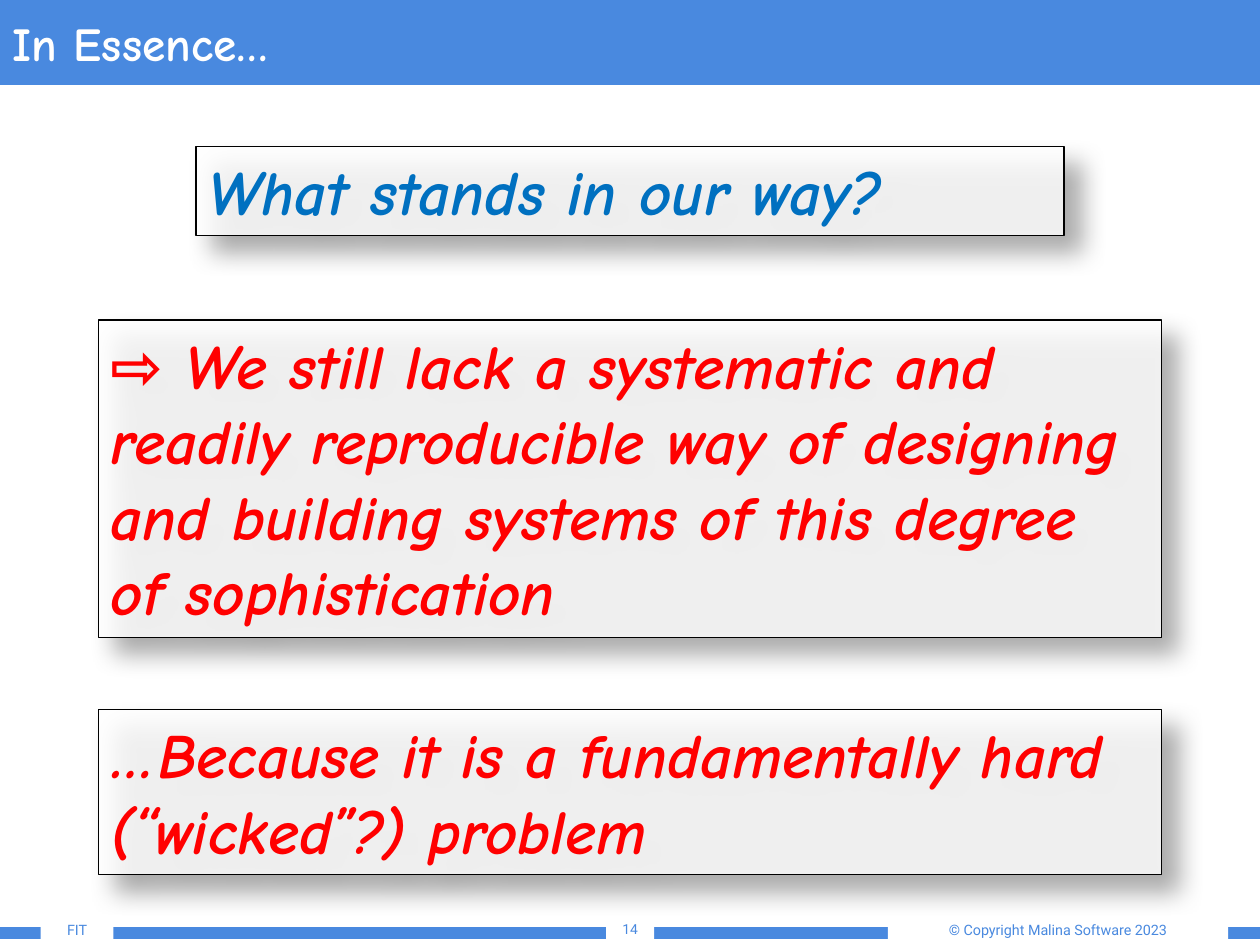
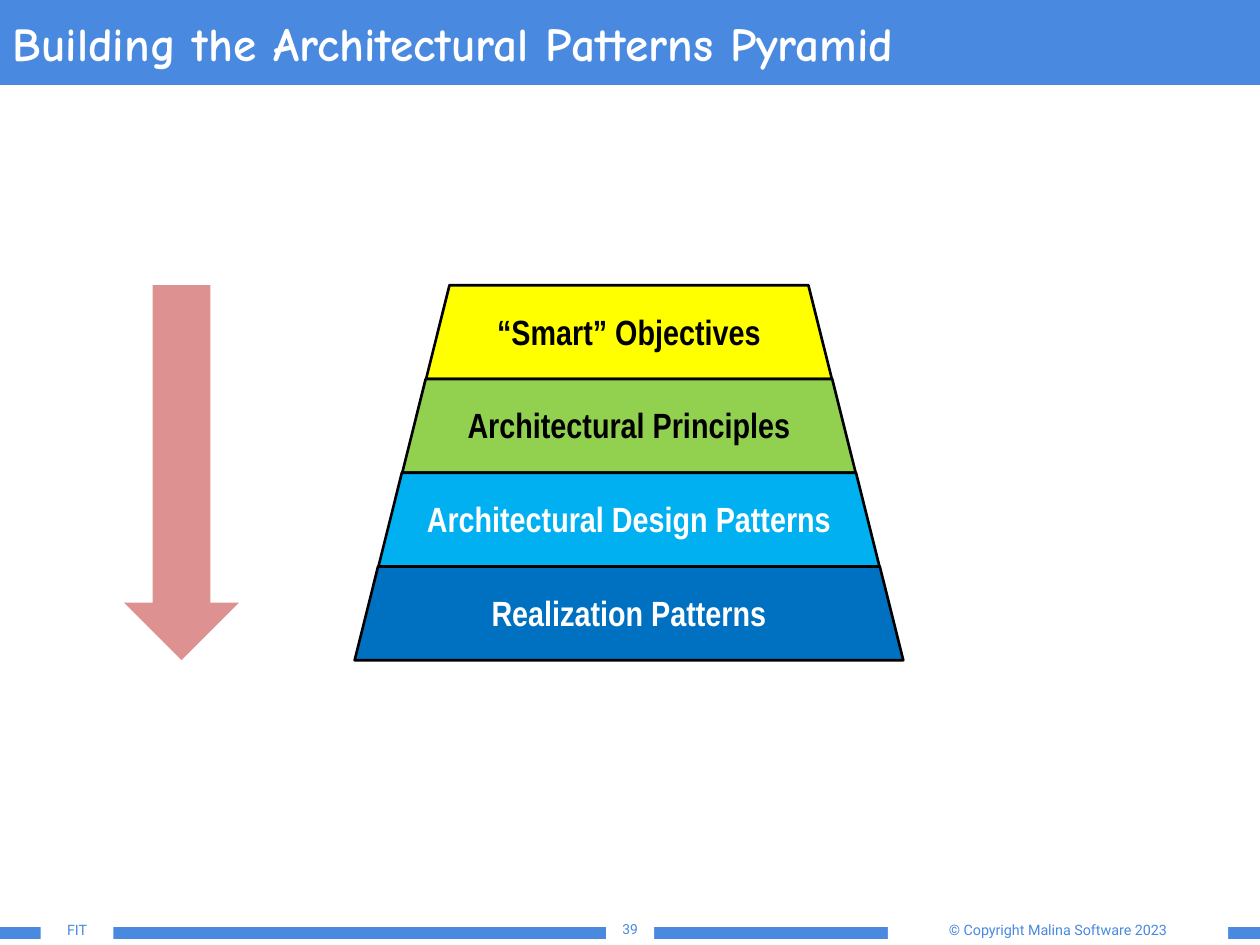
from dataclasses import dataclass

from pptx import Presentation
from pptx.dml.color import RGBColor
from pptx.enum.shapes import MSO_SHAPE
from pptx.enum.text import MSO_ANCHOR, PP_ALIGN
from pptx.oxml import parse_xml
from pptx.oxml.ns import nsdecls, qn
from pptx.util import Cm, Pt

RECTANGLE = MSO_SHAPE.RECTANGLE
TRAPEZOID = MSO_SHAPE.TRAPEZOID
DOWN_ARROW = MSO_SHAPE.DOWN_ARROW
TOP, MIDDLE = MSO_ANCHOR.TOP, MSO_ANCHOR.MIDDLE
LEFT, CENTER = PP_ALIGN.LEFT, PP_ALIGN.CENTER


@dataclass
class Theme:
    band: str = "4989DF"
    white: str = "FFFFFF"
    black: str = "000000"
    red: str = "FF0000"
    blue: str = "0070C0"
    sky: str = "00B0F0"
    green: str = "92D050"
    yellow: str = "FFFF00"
    arrow: str = "DD9191"
    hand_font: str = "Comic Neue"
    footer_font: str = "Roboto"
    layer_font: str = "Arial Narrow"
    title_size: float = 27
    statement_size: float = 36
    layer_size: float = 20
    footer_size: float = 8.2
    number_size: float = 7.9


theme = Theme()


def add_block(slide, preset, left, top, width, height, fill, line=None, line_width=0.75):
    """Add a filled preset shape; lengths in centimetres."""
    shape = slide.shapes.add_shape(preset, Cm(left), Cm(top), Cm(width), Cm(height))
    shape.shadow.inherit = False
    shape.fill.solid()
    shape.fill.fore_color.rgb = RGBColor.from_string(fill)
    if line:
        shape.line.color.rgb = RGBColor.from_string(line)
        shape.line.width = Pt(line_width)
    else:
        shape.line.fill.background()
    return shape


def write(shape, text, font_name, size, color, align=LEFT, anchor=TOP, bold=False, italic=False):
    """Put one styled paragraph into a shape."""
    frame = shape.text_frame
    frame.word_wrap = True
    frame.vertical_anchor = anchor
    paragraph = frame.paragraphs[0]
    paragraph.text = text
    paragraph.alignment = align
    font = paragraph.font
    font.name, font.size = font_name, Pt(size)
    font.bold, font.italic = bold, italic
    font.color.rgb = RGBColor.from_string(color)
    return paragraph


presentation = Presentation()
presentation.slide_width = Cm(25.4)
presentation.slide_height = Cm(19.05)

# Title band, footer band and footer texts on every slide
slides = []
for title, number in [
    ("In Essence…", "14"),
    ("Building the Architectural Patterns Pyramid", "39"),
]:
    slide = presentation.slides.add_slide(presentation.slide_layouts[6])
    slides.append(slide)
    add_block(slide, RECTANGLE, 0, 0, 25.4, 1.7, theme.band, theme.band)
    add_block(slide, RECTANGLE, 0, 18.7, 25.4, 0.21, theme.band, theme.band)
    for text, left, width, size in [
        ("© Copyright Malina Software 2023", 17.9, 6.86, theme.footer_size),
        (number, 12.22, 0.97, theme.number_size),
        ("FIT", 0.82, 1.47, theme.footer_size),
    ]:
        label = add_block(slide, RECTANGLE, left, 18.44, width, 0.6, theme.white)
        write(label, text, theme.footer_font, size, theme.band, CENTER)
    title_box = slide.shapes.add_textbox(Cm(0), Cm(0), Cm(25.2), Cm(1.7))
    write(title_box, title, theme.hand_font, theme.title_size, theme.white,
          anchor=MIDDLE, bold=True)

essence_slide, pyramid_slide = slides

# Translucent statement boxes with a soft shadow, centred on the slide
for text, top, width, height, color in [
    ("What stands in our way?", 2.95, 17.5, 1.8, theme.blue),
    ("⇨ We still lack a systematic and readily reproducible way of designing "
     "and building systems of this degree of sophistication", 6.45, 21.44, 6.4, theme.red),
    ("…Because it is a fundamentally hard (“wicked”?) problem", 14.3, 21.44, 3.33, theme.red),
]:
    left = (25.4 - width) / 2
    box = add_block(essence_slide, RECTANGLE, left, top, width, height,
                    theme.white, theme.black)
    properties = box.fill._xPr
    fill_color = properties.find(qn("a:solidFill")).find(qn("a:srgbClr"))
    fill_color.append(parse_xml(f'<a:alpha {nsdecls("a")} val="82000"/>'))
    properties.find(qn("a:effectLst")).append(parse_xml(
        f'<a:outerShdw {nsdecls("a")} blurRad="{Pt(14)}" dist="{Pt(13)}" dir="2700000" '
        f'algn="tl" rotWithShape="0"><a:srgbClr val="{theme.black}">'
        '<a:alpha val="40000"/></a:srgbClr></a:outerShdw>'))
    write(box, text, theme.hand_font, theme.statement_size, color, bold=True, italic=True)

# Pyramid layers, each wider than the one above
pyramid_center, pyramid_top = 12.68, 5.75
layer_height, top_width, widening = 1.89, 8.18, 0.96
layers = [
    ("“Smart” Objectives", theme.yellow, theme.black),
    ("Architectural Principles", theme.green, theme.black),
    ("Architectural Design Patterns", theme.sky, theme.white),
    ("Realization Patterns", theme.blue, theme.white),
]
for index, (text, fill, color) in enumerate(layers):
    width = top_width + index * widening
    layer = add_block(pyramid_slide, TRAPEZOID, pyramid_center - width / 2,
                      pyramid_top + index * layer_height, width, layer_height,
                      fill, theme.black, 1.5)
    paragraph = write(layer, text, theme.layer_font, theme.layer_size, color,
                      CENTER, MIDDLE, bold=True)
    paragraph.line_spacing = 0.9
    layer.text_frame.margin_left = layer.text_frame.margin_right = Cm(0)

# Arrow down the side of the pyramid
add_block(pyramid_slide, DOWN_ARROW, 2.5, pyramid_top, 2.32,
          len(layers) * layer_height, theme.arrow)

presentation.save("out.pptx")
